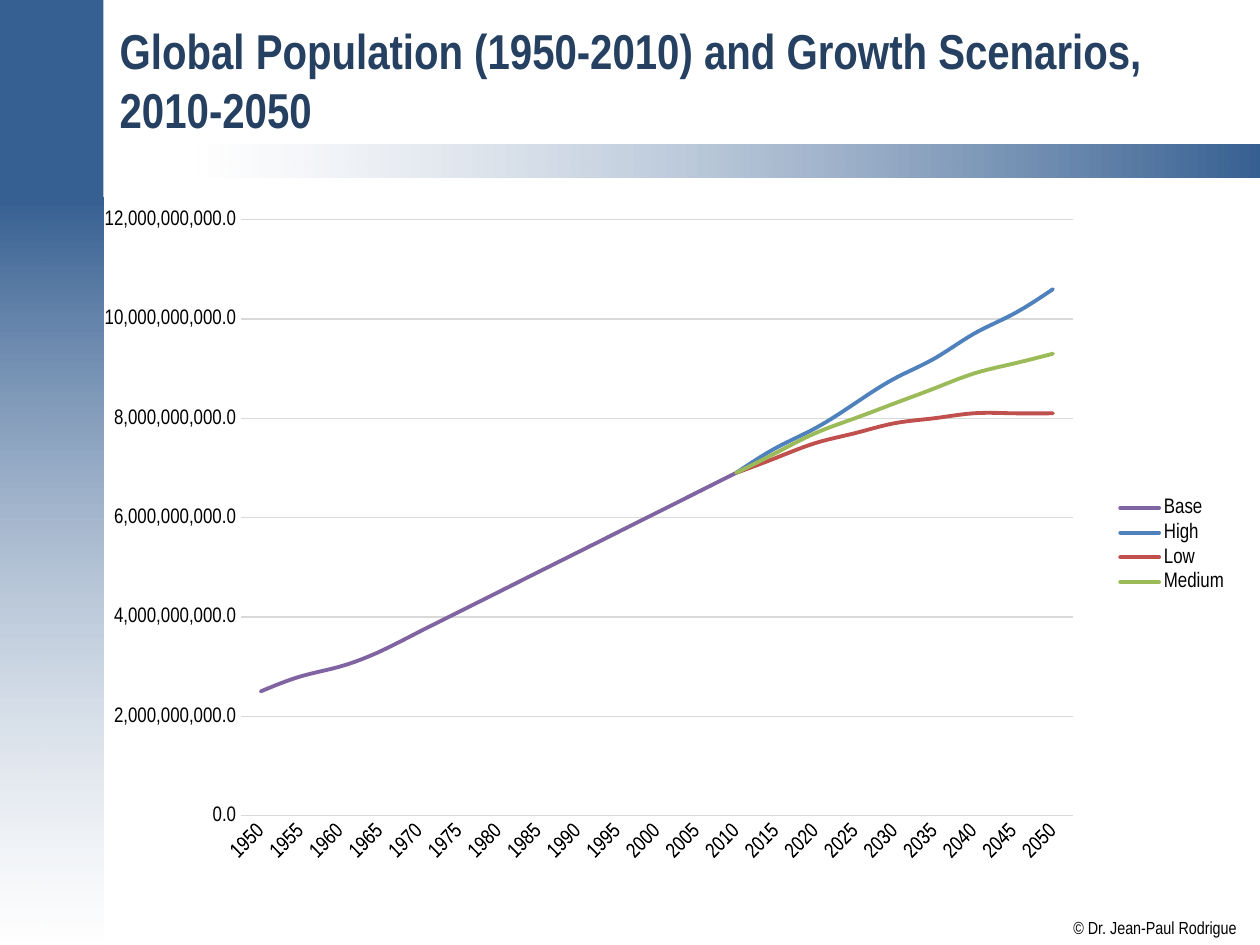
from dataclasses import dataclass

import lxml.etree
import pptx
import pptx.chart.data
import pptx.dml.color
import pptx.enum.chart
import pptx.enum.shapes
import pptx.enum.text
import pptx.oxml
import pptx.oxml.ns
import pptx.util

FONT = "Arial Narrow"
BLUE = "376092"
GRID = "D9D9D9"
FIRST_YEAR, LAST_YEAR, STEP = 1950, 2050, 5


@dataclass(frozen=True)
class Band:
    left: float
    top: float
    width: float
    height: float
    stops: tuple[tuple[str, int], ...]
    angle: int = 0


@dataclass(frozen=True)
class Scenario:
    name: str
    start_year: int
    billions: tuple[float, ...]
    color: str


BANDS = (
    Band(-0.7, 113, 59.8, 427, ((BLUE, 100), ("FFFFFF", 51)), 270),
    Band(113, 82.8, 607, 18.9, (("FFFFFF", 50), (BLUE, 100))),
    Band(-0.7, -0.7, 59.8, 113.7, ((BLUE, 100),)),
)
SCENARIOS = (
    Scenario("Base", 1950, (2.5, 2.8, 3.0, 3.3, 3.7, 4.1, 4.5, 4.9, 5.3, 5.7, 6.1, 6.5, 6.9), "8064A2"),
    Scenario("High", 2010, (6.9, 7.4, 7.8, 8.3, 8.8, 9.2, 9.7, 10.1, 10.6), "4F81BD"),
    Scenario("Low", 2010, (6.9, 7.2, 7.5, 7.7, 7.9, 8.0, 8.1, 8.1, 8.1), "C0504D"),
    Scenario("Medium", 2010, (6.9, 7.3, 7.7, 8.0, 8.3, 8.6, 8.9, 9.1, 9.3), "9BBB59"),
)


def rgb(color: str) -> pptx.dml.color.RGBColor:
    return pptx.dml.color.RGBColor.from_string(color)


def place(shape, left: float, top: float, width: float, height: float) -> None:
    shape.left, shape.top = pptx.util.Pt(left), pptx.util.Pt(top)
    shape.width, shape.height = pptx.util.Pt(width), pptx.util.Pt(height)


def style_font(font, size: float, color: str = "000000", bold: bool = False) -> None:
    font.name = FONT
    font.size = pptx.util.Pt(size)
    font.bold = bold
    font.color.rgb = rgb(color)


def style_line(line, color: str, width: float) -> None:
    line.color.rgb = rgb(color)
    line.width = pptx.util.Pt(width)


def draw_band(page, band: Band) -> None:
    shape = page.shapes.add_shape(
        pptx.enum.shapes.MSO_SHAPE.RECTANGLE,
        *map(pptx.util.Pt, (band.left, band.top, band.width, band.height)),
    )
    shape.shadow.inherit = False
    shape.line.fill.background()
    if len(band.stops) == 1:
        shape.fill.solid()
        shape.fill.fore_color.rgb = rgb(band.stops[0][0])
        return
    shape.fill.gradient()
    shape.fill.gradient_angle = band.angle
    for stop, (color, _) in zip(shape.fill.gradient_stops, band.stops):
        stop.color.rgb = rgb(color)
    colors = shape.element.spPr.iter(pptx.oxml.ns.qn("a:srgbClr"))
    for element, (_, opacity) in zip(colors, band.stops):
        if opacity < 100:
            alpha = lxml.etree.SubElement(element, pptx.oxml.ns.qn("a:alpha"))
            alpha.set("val", str(opacity * 1000))


def write_title(page) -> None:
    title = page.shapes.title
    place(title, 61.2, 7.9, 646.6, 74.9)
    frame = title.text_frame
    frame.text = "Global Population (1950-2010) and Growth Scenarios, 2010-2050"
    frame.vertical_anchor = pptx.enum.text.MSO_ANCHOR.MIDDLE
    frame.auto_size = pptx.enum.text.MSO_AUTO_SIZE.NONE
    para = frame.paragraphs[0]
    para.alignment = pptx.enum.text.PP_ALIGN.LEFT
    style_font(para.runs[0].font, 28, "254061", True)


def write_credit(page) -> None:
    box = page.shapes.add_textbox(*map(pptx.util.Pt, (613.4, 524.2, 93.6, 12.2)))
    frame = box.text_frame
    frame.margin_left = frame.margin_right = frame.margin_top = frame.margin_bottom = 0
    frame.word_wrap = False
    frame.text = "© Dr. Jean-Paul Rodrigue"
    style_font(frame.paragraphs[0].runs[0].font, 10)


def set_plot_layout(chart, **fractions: float) -> None:
    area = chart.element.chart.plotArea
    for old in area.findall(pptx.oxml.ns.qn("c:layout")):
        area.remove(old)
    layout = pptx.oxml.parse_xml(
        f"<c:layout {pptx.oxml.ns.nsdecls('c')}><c:manualLayout/></c:layout>"
    )
    settings = {"layoutTarget": "inner", "xMode": "edge", "yMode": "edge", **fractions}
    for name, value in settings.items():
        item = lxml.etree.SubElement(layout[0], pptx.oxml.ns.qn(f"c:{name}"))
        item.set("val", str(value))
    area.insert(0, layout)


def draw_chart(page) -> None:
    years = range(FIRST_YEAR, LAST_YEAR + 1, STEP)
    data = pptx.chart.data.CategoryChartData(number_format="#,##0.0")
    data.categories = [str(year) for year in years]
    for scenario in SCENARIOS:
        before = (scenario.start_year - FIRST_YEAR) // STEP
        after = len(years) - before - len(scenario.billions)
        people = [round(value * 10) * 10**8 for value in scenario.billions]
        data.add_series(scenario.name, [None] * before + people + [None] * after)
    chart = page.shapes.add_chart(
        pptx.enum.chart.XL_CHART_TYPE.LINE,
        *map(pptx.util.Pt, (59.8, 103, 649.4, 416.9)),
        data,
    ).chart
    style_font(chart.font, 10)
    chart.has_title = False
    chart.has_legend = True
    chart.legend.position = pptx.enum.chart.XL_LEGEND_POSITION.RIGHT
    chart.legend.include_in_layout = False
    style_font(chart.legend.font, 12)
    set_plot_layout(chart, x=0.102, y=0.054, w=0.747, h=0.817)

    for axis in (chart.category_axis, chart.value_axis):
        axis.major_tick_mark = axis.minor_tick_mark = pptx.enum.chart.XL_TICK_MARK.NONE
        style_font(axis.tick_labels.font, 12)
    years_axis, people_axis = chart.category_axis, chart.value_axis
    style_line(years_axis.format.line, GRID, 0.75)
    rotation = years_axis._element.find(".//" + pptx.oxml.ns.qn("a:bodyPr"))
    rotation.set("rot", str(-45 * 60000))
    people_axis.minimum_scale = 0
    people_axis.maximum_scale = 12 * 10**9
    people_axis.major_unit = 2 * 10**9
    people_axis.tick_labels.number_format = "#,##0.0"
    people_axis.tick_labels.number_format_is_linked = False
    people_axis.format.line.fill.background()
    style_line(people_axis.major_gridlines.format.line, GRID, 0.75)

    chart.plots[0].vary_by_categories = False
    for series, scenario in zip(chart.plots[0].series, SCENARIOS):
        series.smooth = True
        series.marker.style = pptx.enum.chart.XL_MARKER_STYLE.NONE
        style_line(series.format.line, scenario.color, 2.25)
        series.format.line._ln.set("cap", "rnd")


def main() -> None:
    deck = pptx.Presentation()
    deck.slide_width, deck.slide_height = pptx.util.Pt(720), pptx.util.Pt(540)
    page = deck.slides.add_slide(deck.slide_layouts.get_by_name("Title Only"))
    for band in BANDS:
        draw_band(page, band)
    write_credit(page)
    write_title(page)
    draw_chart(page)
    deck.save("out.pptx")


if __name__ == "__main__":
    main()
